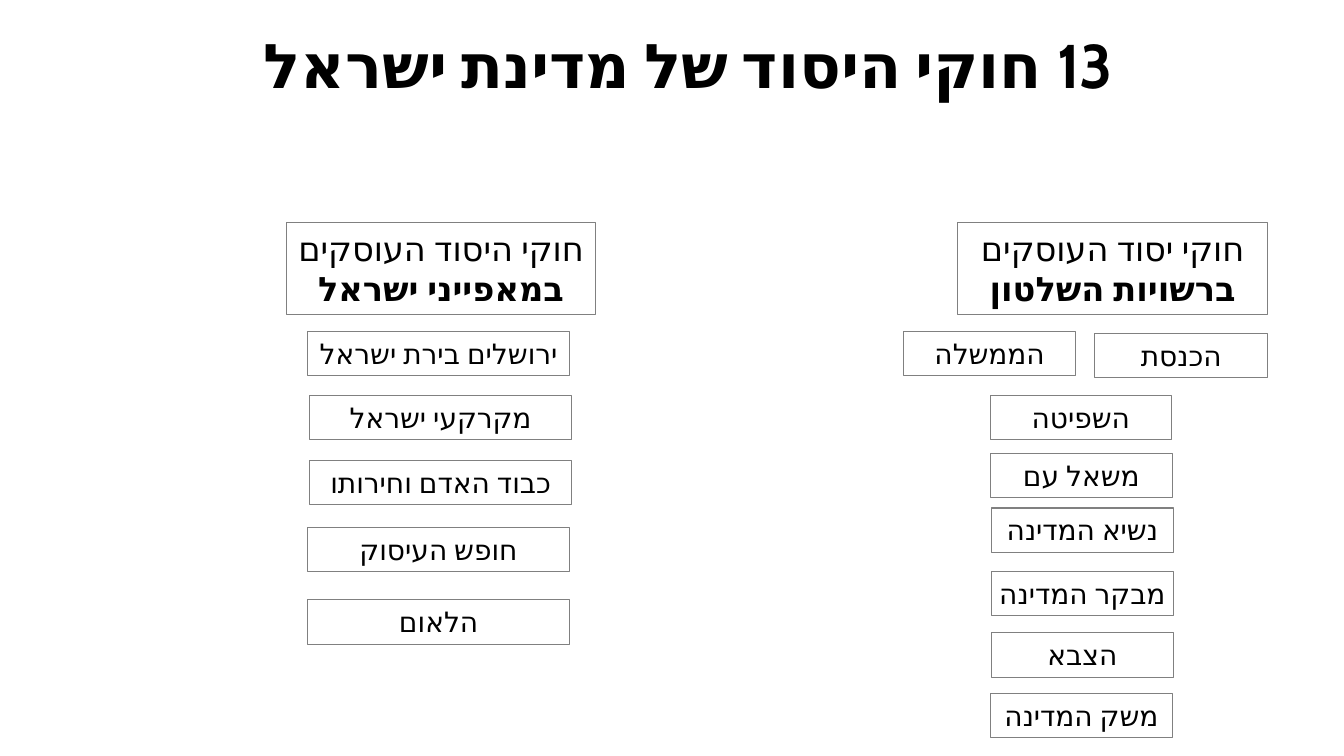
from lxml import etree
from pptx import Presentation
from pptx import util as u
from pptx.dml.color import RGBColor
from pptx.enum import lang, shapes, text
from pptx.oxml.ns import qn

COLS, ROWS = 1333, 750
CELL = u.Inches(0.01)
COLORS = {"text": "000000", "border": "808080"}
HEADER = {"width": 307, "height": 91, "size": 24}
LAW = {"height": 44, "size": 20}

RIGHT_HEADER = [[("חוקי יסוד העוסקים ", False), ("ברשויות השלטון", True)]]
LEFT_HEADER = [[("חוקי היסוד העוסקים", False)], [("במאפייני ישראל", True)]]

RIGHT_LAWS = [
    ("הכנסת", 190, 110, 171),
    ("הממשלה", 0, 108, 171),
    ("השפיטה", 86, 171, 180),
    ("משאל עם", 86, 229, 181),
    ("נשיא המדינה", 87, 283, 181),
    ("מבקר המדינה", 87, 346, 181),
    ("הצבא", 87, 407, 181),
    ("משק המדינה", 86, 467, 181),
]
LEFT_LAWS = [
    ("ירושלים בירת ישראל", 21, 108, 260),
    ("מקרקעי ישראל", 23, 171, 260),
    ("כבוד האדם וחירותו", 23, 236, 260),
    ("חופש העיסוק", 21, 302, 260),
    ("הלאום", 21, 374, 260),
]


def set_all(obj, values):
    for name, value in values.items():
        setattr(obj, name, value)


def write(tf, paragraphs, size, font, spacing=None):
    for i, runs in enumerate(paragraphs):
        p = tf.add_paragraph() if i else tf.paragraphs[0]
        set_all(p, {"alignment": text.PP_ALIGN.CENTER, "line_spacing": spacing})
        p._p.get_or_add_pPr().set("rtl", "1")
        for words, bold in runs:
            r = p.add_run()
            r.text = words
            set_all(r.font, {"size": u.Pt(size), "bold": bold, "name": font,
                             "language_id": lang.MSO_LANGUAGE_ID.HEBREW})
            r.font.color.rgb = RGBColor.from_string(COLORS["text"])
            cs = etree.SubElement(r.font._element, qn("a:cs"))
            cs.set("typeface", font)


def add_title(slide, box, words):
    sp = slide.shapes.add_textbox(*(n * CELL for n in box))
    tf = sp.text_frame
    set_all(tf, {"word_wrap": True, "vertical_anchor": text.MSO_ANCHOR.BOTTOM,
                 "margin_left": 13 * CELL, "margin_right": 13 * CELL,
                 "margin_top": 7 * CELL, "margin_bottom": 7 * CELL})
    write(tf, [[(words, True)]], 44, "Cabin", 0.85)


def add_frame(slide, box, paragraphs, size):
    sp = slide.shapes.add_shape(shapes.MSO_SHAPE.RECTANGLE, *(n * CELL for n in box))
    sp.shadow.inherit = False
    sp.fill.background()
    sp.line.color.rgb = RGBColor.from_string(COLORS["border"])
    sp.line.width = u.Pt(0.75)
    set_all(sp.text_frame, {"word_wrap": True,
                            "margin_left": 3 * CELL, "margin_right": 3 * CELL,
                            "vertical_anchor": text.MSO_ANCHOR.TOP,
                            "auto_size": text.MSO_AUTO_SIZE.SHAPE_TO_FIT_TEXT})
    write(sp.text_frame, paragraphs, size, "League Spartan")


def add_law_group(slide, box, header, header_left, laws):
    left, top = box
    add_frame(slide, (left + header_left, top, HEADER["width"], HEADER["height"]),
              header, HEADER["size"])
    for name, dx, dy, width in laws:
        add_frame(slide, (left + dx, top + dy, width, LAW["height"]),
                  [[(name, False)]], LAW["size"])


def main():
    prs = Presentation()
    set_all(prs, {"slide_width": COLS * CELL, "slide_height": ROWS * CELL})
    slide = prs.slides.add_slide(prs.slide_layouts[6])
    add_title(slide, (68, 9, 1229, 98), "13 חוקי היסוד של מדינת ישראל")
    add_law_group(slide, (896, 221), RIGHT_HEADER, 54, RIGHT_LAWS)
    add_law_group(slide, (284, 221), LEFT_HEADER, 0, LEFT_LAWS)
    prs.save("out.pptx")


if __name__ == "__main__":
    main()
